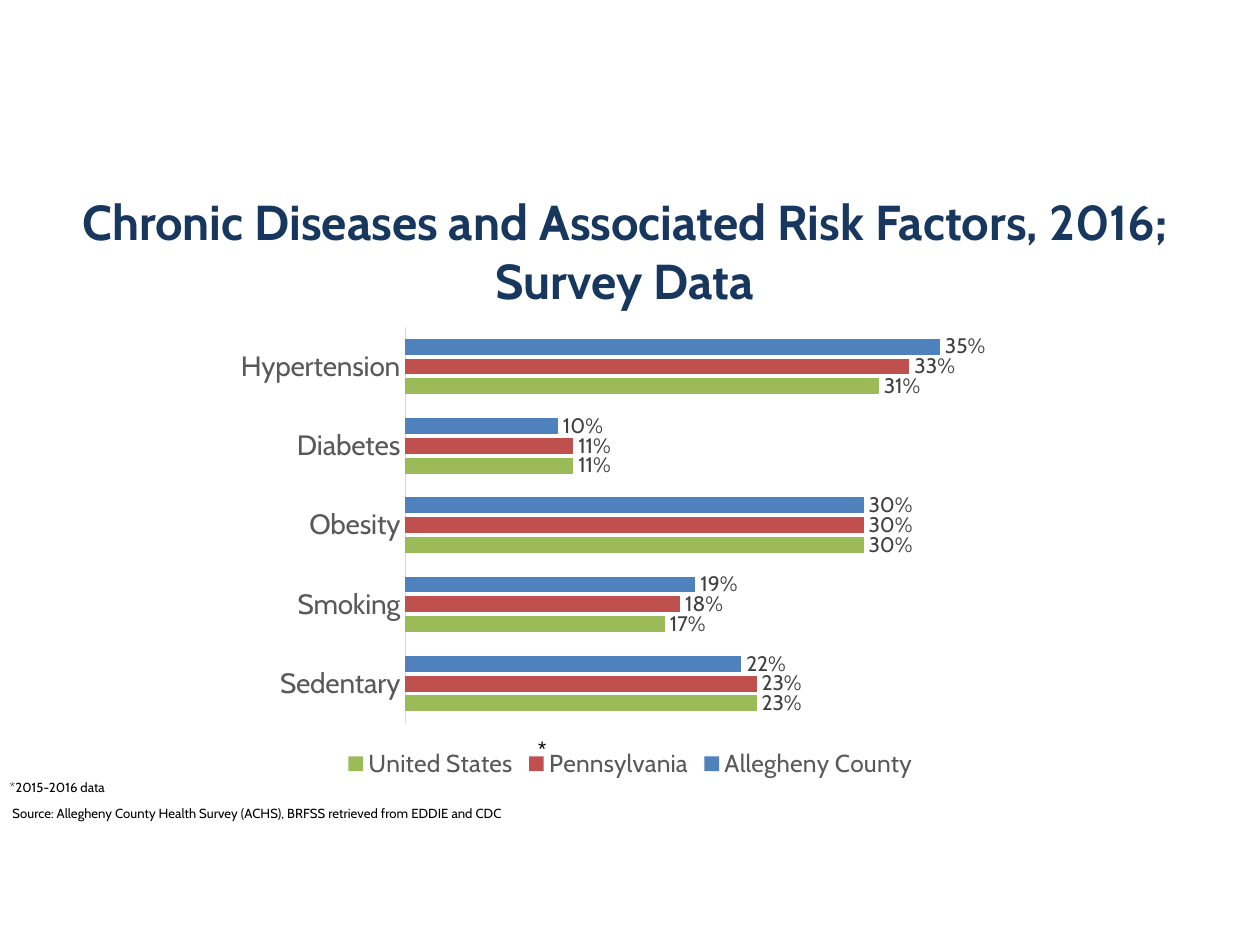
from pptx import Presentation
from pptx.chart.data import CategoryChartData
from pptx.dml.color import RGBColor
from pptx.enum.chart import XL_CHART_TYPE, XL_LABEL_POSITION, XL_LEGEND_POSITION, XL_TICK_MARK
from pptx.enum.text import MSO_ANCHOR, PP_ALIGN
from pptx.oxml import parse_xml
from pptx.oxml.ns import nsdecls
from pptx.util import Pt

CATEGORIES = ["Hypertension", "Diabetes", "Obesity", "Smoking", "Sedentary"]
SERIES = [
    ("Allegheny County", (0.35, 0.10, 0.30, 0.19, 0.22), "4F81BD"),
    ("Pennsylvania", (0.33, 0.11, 0.30, 0.18, 0.23), "C0504D"),
    ("United States", (0.31, 0.11, 0.30, 0.17, 0.23), "9BBB59"),
]
PLOT_AREA = {"x": 0.22, "y": 0.02, "w": 0.76, "h": 0.85}


def color(value):
    return RGBColor.from_string(value)


class SlideBuilder:
    typeface = "Cabin"
    black = "000000"
    gray = "595959"

    def __init__(self, page):
        self.page = page

    def style(self, font, size, ink, typeface=None, bold=False):
        font.name = typeface or self.typeface
        font.size = Pt(size)
        font.bold = bold
        font.color.rgb = color(ink)

    def text(self, words, left, top, width, height, size, ink=None, typeface=None,
             bold=False, align=PP_ALIGN.LEFT, anchor=MSO_ANCHOR.TOP, inset=7.2, wrap=True):
        box = self.page.shapes.add_textbox(Pt(left), Pt(top), Pt(width), Pt(height))
        frame = box.text_frame
        frame.word_wrap = wrap
        frame.vertical_anchor = anchor
        frame.margin_left = frame.margin_right = Pt(inset)
        para = frame.paragraphs[0]
        para.text = words
        para.alignment = align
        self.style(para.font, size, ink or self.black, typeface, bold)

    def bar_chart(self, categories, series, left, top, width, height, plot_area):
        data = CategoryChartData(number_format="0%")
        data.categories = categories
        for name, values, fill in series:
            data.add_series(name, values)
        chart = self.page.shapes.add_chart(
            XL_CHART_TYPE.BAR_CLUSTERED, Pt(left), Pt(top), Pt(width), Pt(height), data).chart
        self.style(chart.font, 10, self.black)
        chart.has_title = False
        chart.has_legend = True
        chart.legend.position = XL_LEGEND_POSITION.BOTTOM
        chart.legend.include_in_layout = False
        self.style(chart.legend.font, 14, self.gray)
        self.axes(chart)
        plot = chart.plots[0]
        plot.gap_width = 150
        plot.overlap = -25
        plot.vary_by_categories = False
        for bars, (name, values, fill) in zip(plot.series, series):
            bars.format.fill.solid()
            bars.format.fill.fore_color.rgb = color(fill)
            labels = bars.data_labels
            labels.show_value = True
            labels.number_format = "0%"
            labels.number_format_is_linked = False
            labels.position = XL_LABEL_POSITION.OUTSIDE_END
            self.style(labels.font, 12, "404040")
        self.place_plot(chart, plot_area)

    def axes(self, chart):
        category = chart.category_axis
        category.reverse_order = True
        category.has_major_gridlines = False
        category.major_tick_mark = category.minor_tick_mark = XL_TICK_MARK.NONE
        category.format.line.color.rgb = color("D9D9D9")
        category.format.line.width = Pt(0.75)
        self.style(category.tick_labels.font, 16, self.gray)
        value = chart.value_axis
        value.visible = False
        value.has_major_gridlines = False
        value.minimum_scale = 0
        value.maximum_scale = 0.4
        value.tick_labels.number_format = "0%"
        value.tick_labels.number_format_is_linked = False

    def place_plot(self, chart, plot_area):
        sizes = "".join(f'<c:{key} val="{size}"/>' for key, size in plot_area.items())
        layout = parse_xml(
            f'<c:layout {nsdecls("c")}><c:manualLayout><c:layoutTarget val="inner"/>'
            f'<c:xMode val="edge"/><c:yMode val="edge"/>{sizes}</c:manualLayout></c:layout>')
        area = chart.plots[0]._element.getparent()
        for old in area.xpath("c:layout"):
            area.remove(old)
        area.insert(0, layout)


def main():
    deck = Presentation()
    deck.slide_width, deck.slide_height = Pt(720), Pt(540)
    builder = SlideBuilder(deck.slides.add_slide(deck.slide_layouts[6]))
    builder.text("Chronic Diseases and Associated Risk Factors, 2016; Survey Data",
                 0, 108, 714, 70.5, 28, "17375E", bold=True,
                 align=PP_ALIGN.CENTER, anchor=MSO_ANCHOR.MIDDLE)
    builder.text("Source: Allegheny County Health Survey (ACHS), BRFSS retrieved from EDDIE and CDC",
                 0, 456.5, 315.5, 16.5, 7.5)
    builder.text("*2015-2016 data", -1.5, 442, 315.5, 16.5, 7.5)
    builder.bar_chart(CATEGORIES, SERIES, 130.5, 181.5, 459.5, 266.5, PLOT_AREA)
    builder.text("*", 307.5, 417, 6, 21.5, 12, typeface="Arial", inset=0, wrap=False)
    deck.save("out.pptx")


if __name__ == "__main__":
    main()
